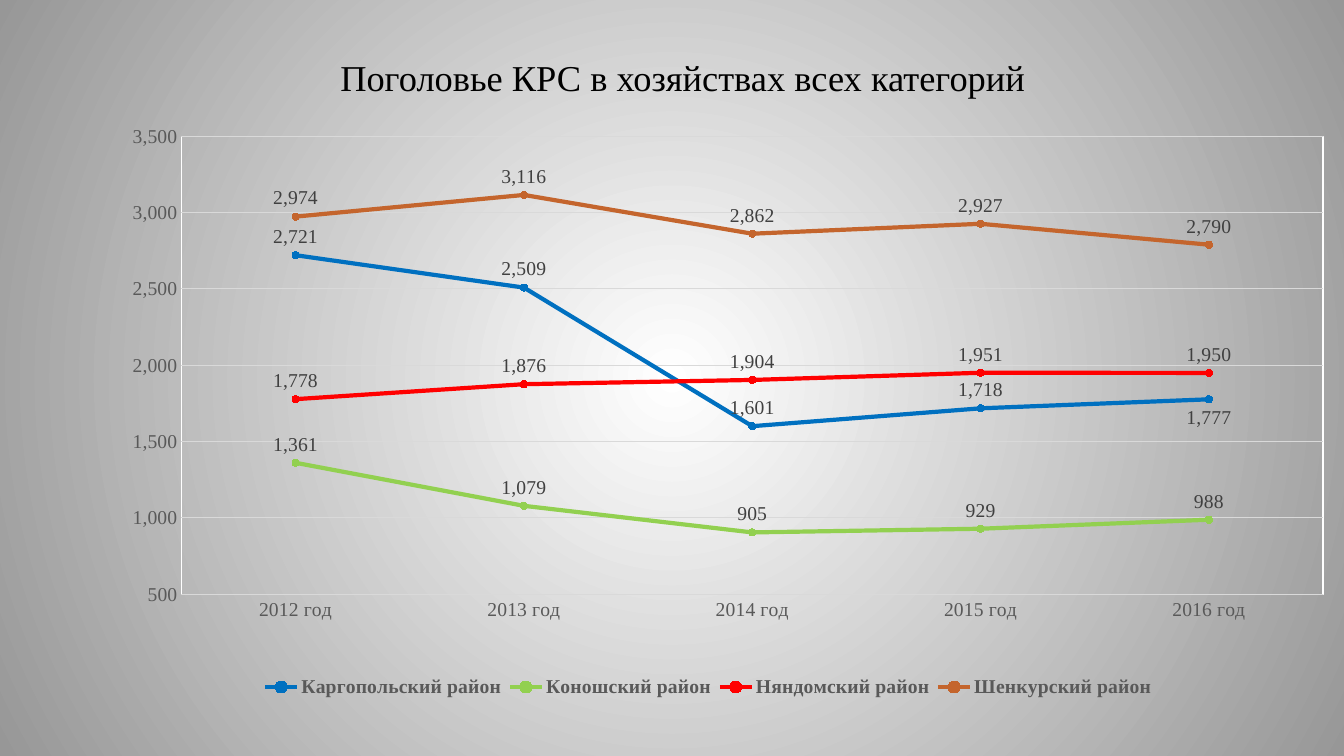
from dataclasses import dataclass

from pptx import Presentation
from pptx.chart.data import CategoryChartData
from pptx.dml.color import RGBColor
from pptx.enum.chart import (XL_CHART_TYPE, XL_LABEL_POSITION, XL_LEGEND_POSITION,
                             XL_MARKER_STYLE, XL_TICK_MARK)
from pptx.enum.text import MSO_ANCHOR, PP_ALIGN
from pptx.oxml import parse_xml
from pptx.oxml.ns import nsdecls, qn
from pptx.util import Inches, Pt


@dataclass(frozen=True)
class Theme:
    face: str = "Times New Roman"
    title: int = 26
    body: int = 14
    ink: str = "000000"
    axis: str = "595959"
    label: str = "404040"
    grid: str = "D9D9D9"
    frame: str = "FFFFFF"
    glow: tuple = ("FFFFFF", "979797")


YEARS = [f"{year} год" for year in range(2012, 2017)]
HERDS = [
    ("Каргопольский район", "0070C0", (2721, 2509, 1601, 1718, 1777)),
    ("Коношский район", "92D050", (1361, 1079, 905, 929, 988)),
    ("Няндомский район", "FF0000", (1778, 1876, 1904, 1951, 1950)),
    ("Шенкурский район", "C4652D", (2974, 3116, 2862, 2927, 2790)),
]
COUNT = "#,##0"


class Deck:
    def __init__(self, theme):
        self.theme = theme
        self.show = Presentation()
        self.show.slide_width = Inches(13.33)
        self.show.slide_height = Inches(7.5)
        self.slide = self.show.slides.add_slide(self.show.slide_layouts[6])

    def style(self, font, size, color, bold=False):
        font.name = self.theme.face
        font.size = Pt(size)
        font.bold = bold
        font.color.rgb = RGBColor.from_string(color)

    def stroke(self, line, color, width):
        line.color.rgb = RGBColor.from_string(color)
        line.width = Pt(width)

    def place(self, part, spot, box, inner=False):
        """Fix a chart part at box, given as fractions of the chart."""
        for old in part.findall(qn("c:layout")):
            part.remove(old)
        target = '<c:layoutTarget val="inner"/>' if inner else ""
        modes = "".join(f'<c:{key}Mode val="edge"/>' for key in "xy")
        sizes = "".join(f'<c:{key} val="{val}"/>' for key, val in zip("xywh", box))
        part.insert(spot, parse_xml(
            f'<c:layout {nsdecls("c")}><c:manualLayout>{target}{modes}{sizes}'
            '</c:manualLayout></c:layout>'))

    def backdrop(self):
        fill = self.slide.background.fill
        fill.gradient()
        for stop, color in zip(fill.gradient_stops, self.theme.glow):
            stop.color.rgb = RGBColor.from_string(color)
        grad = next(self.slide.element.iter(qn("a:gradFill")))
        grad.remove(grad.find(qn("a:lin")))
        grad.append(parse_xml(
            f'<a:path {nsdecls("a")} path="circle">'
            '<a:fillToRect l="50000" t="50000" r="50000" b="50000"/></a:path>'))

    def title(self, text, box):
        frame = self.slide.shapes.add_textbox(*map(Inches, box)).text_frame
        frame.word_wrap = True
        frame.vertical_anchor = MSO_ANCHOR.MIDDLE
        para = frame.paragraphs[0]
        para.alignment = PP_ALIGN.CENTER
        run = para.add_run()
        run.text = text
        self.style(run.font, self.theme.title, self.theme.ink)

    def axes(self, chart):
        for axis in (chart.category_axis, chart.value_axis):
            axis.major_tick_mark = axis.minor_tick_mark = XL_TICK_MARK.NONE
            self.style(axis.tick_labels.font, self.theme.body, self.theme.axis)
        self.stroke(chart.category_axis.format.line, self.theme.grid, 0.75)
        scale = chart.value_axis
        scale.minimum_scale, scale.maximum_scale = 500, 3500
        scale.major_unit = 500
        scale.format.line.fill.background()
        scale.tick_labels.number_format = COUNT
        scale.tick_labels.number_format_is_linked = False
        self.stroke(scale.major_gridlines.format.line, self.theme.grid, 0.75)

    def series(self, item, color):
        item.smooth = False
        self.stroke(item.format.line, color, 3)
        mark = item.marker
        mark.style, mark.size = XL_MARKER_STYLE.CIRCLE, 5
        mark.format.fill.solid()
        mark.format.fill.fore_color.rgb = RGBColor.from_string(color)
        self.stroke(mark.format.line, color, 0.75)
        tags = item.data_labels
        tags.show_value = True
        tags.position = XL_LABEL_POSITION.ABOVE
        tags.number_format = COUNT
        tags.number_format_is_linked = False
        self.style(tags.font, self.theme.body, self.theme.label)

    def legend(self, chart, box):
        chart.has_legend = True
        key = chart.legend
        key.position = XL_LEGEND_POSITION.BOTTOM
        key.include_in_layout = False
        self.style(key.font, self.theme.body, self.theme.axis, bold=True)
        self.place(chart._chartSpace.chart.find(qn("c:legend")), 1, box)

    def chart(self, box, plot, key):
        data = CategoryChartData(number_format=COUNT)
        data.categories = YEARS
        for name, _, counts in HERDS:
            data.add_series(name, counts)
        chart = self.slide.shapes.add_chart(
            XL_CHART_TYPE.LINE_MARKERS, *map(Inches, box), data).chart
        chart.has_title = False
        self.style(chart.font, self.theme.body, self.theme.ink)
        self.axes(chart)
        lines = chart.plots[0]
        lines.vary_by_categories = False
        for item, (_, color, _) in zip(lines.series, HERDS):
            self.series(item, color)
        last = lines.series[0].points[len(YEARS) - 1].data_label
        self.style(last.font, self.theme.body, self.theme.label)
        last.position = XL_LABEL_POSITION.BELOW
        area = chart._chartSpace.chart.plotArea
        self.place(area, 0, plot, inner=True)
        area.append(parse_xml(
            f'<c:spPr {nsdecls("c", "a")}><a:noFill/><a:ln w="{Pt(1)}"><a:solidFill>'
            f'<a:srgbClr val="{self.theme.frame}"/></a:solidFill></a:ln></c:spPr>'))
        self.legend(chart, key)

    def save(self):
        self.show.save("out.pptx")


def main():
    deck = Deck(Theme())
    deck.backdrop()
    deck.title("Поголовье КРС в хозяйствах всех категорий", (0.68, 0.29, 12.19, 0.94))
    deck.chart((0.68, 1.23, 12.45, 6.14), plot=(0.09, 0.02, 0.91, 0.74),
               key=(0.15, 0.88, 0.72, 0.06))
    deck.save()


if __name__ == "__main__":
    main()
